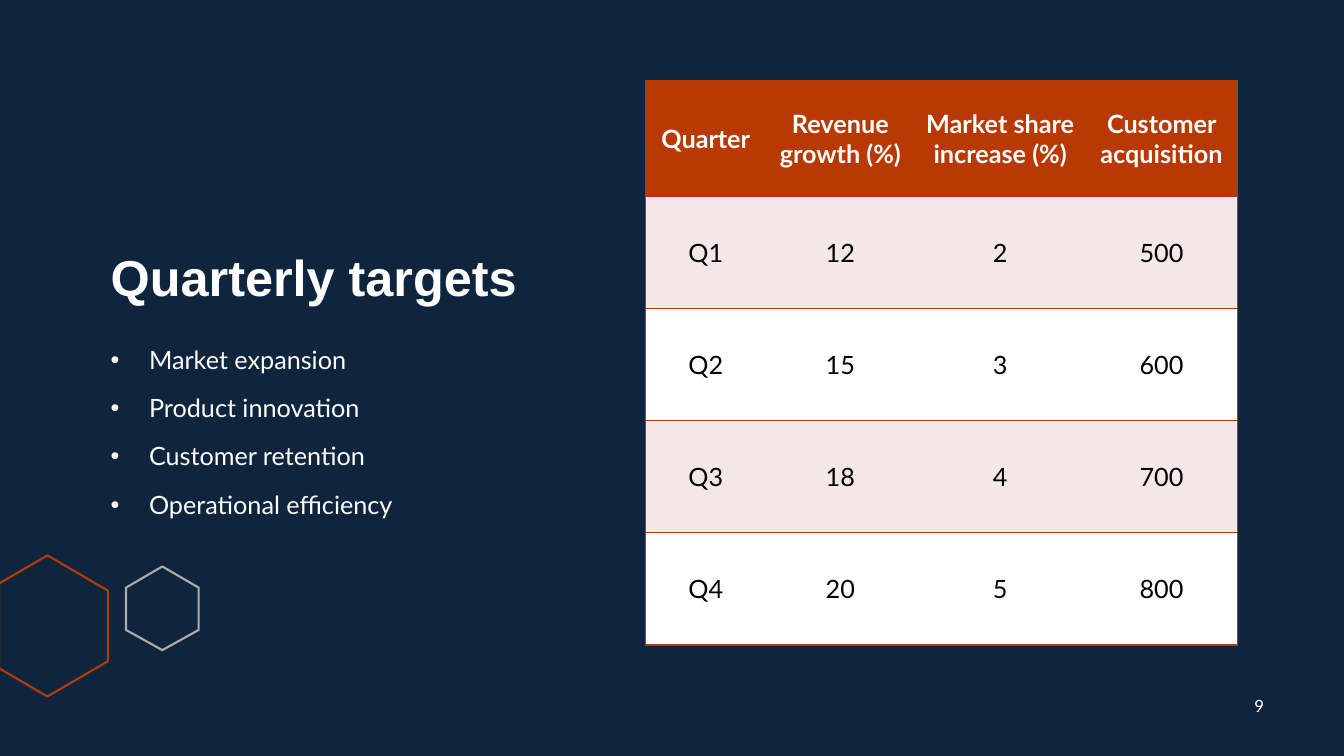
from lxml import etree
from pptx import Presentation
from pptx.dml.color import RGBColor
from pptx.enum import text as t
from pptx.oxml import ns
from pptx.util import Inches, Pt

# Content
TITLE = "Quarterly targets"
GOALS = ["Market expansion", "Product innovation", "Customer retention",
         "Operational efficiency"]
TARGETS = [
    ("Quarter", "Revenue growth (%)", "Market share increase (%)", "Customer acquisition"),
    ("Q1", "12", "2", "500"),
    ("Q2", "15", "3", "600"),
    ("Q3", "18", "4", "700"),
    ("Q4", "20", "5", "800"),
]
PAGE = "9"

# Style
NAVY = RGBColor(0x0F, 0x25, 0x3E)
RUST = RGBColor(0xB8, 0x39, 0x03)
GRAY = RGBColor(0xAF, 0xAB, 0xAB)
BLUSH = RGBColor(0xF3, 0xE8, 0xE7)
WHITE = RGBColor(0xFF, 0xFF, 0xFF)
BLACK = RGBColor(0, 0, 0)
PLAIN_TABLE = "{2D5ABB26-0587-4C30-8999-92F81FD0307C}"

# Layout, in inches
COLUMNS = [1.2, 1.47, 1.7, 1.5]
TABLE_HEIGHT, HEADER_HEIGHT = 5.6, 1.15
ROW_HEIGHT = (TABLE_HEIGHT - HEADER_HEIGHT) / (len(TARGETS) - 1)
HEXAGONS = [
    (RUST, [(0.47, 5.51), (1.07, 5.86), (1.07, 6.56), (0.47, 6.91),
            (-0.01, 6.63), (-0.01, 5.79)]),
    (GRAY, [(1.61, 5.62), (1.97, 5.83), (1.97, 6.25), (1.61, 6.45),
            (1.25, 6.25), (1.25, 5.83)]),
]


def add_run(paragraph, words, size, color=WHITE, bold=False, font="Lato"):
    run = paragraph.add_run()
    run.text = words
    run.font.size, run.font.name, run.font.bold = Pt(size), font, bold
    run.font.color.rgb = color


def add_frame(slide, left, top, width, height, anchor):
    box = slide.shapes.add_textbox(*map(Inches, (left, top, width, height)))
    frame = box.text_frame
    frame.word_wrap = True
    frame.vertical_anchor = anchor
    return frame


def add_bullet(paragraph):
    props = paragraph._p.get_or_add_pPr()
    props.set("marL", str(Inches(0.38)))
    props.set("indent", str(-Inches(0.38)))
    etree.SubElement(props, ns.qn("a:buFont")).set("typeface", "Arial")
    etree.SubElement(props, ns.qn("a:buChar")).set("char", "•")


def add_border(cell, side, visible):
    line = etree.SubElement(cell._tc.get_or_add_tcPr(), ns.qn("a:ln" + side))
    line.set("w", str(Pt(1)))
    if visible:
        fill = etree.SubElement(line, ns.qn("a:solidFill"))
        etree.SubElement(fill, ns.qn("a:srgbClr")).set("val", str(RUST))
    else:
        etree.SubElement(line, ns.qn("a:noFill"))


def add_hexagon(slide, color, points):
    corners = [(Inches(x), Inches(y)) for x, y in points]
    builder = slide.shapes.build_freeform(*corners[0])
    builder.add_line_segments(corners[1:], close=True)
    hexagon = builder.convert_to_shape()
    hexagon.shadow.inherit = False
    hexagon.fill.background()
    hexagon.line.color.rgb = color
    hexagon.line.width = Pt(1.5)


def add_targets(slide):
    table = slide.shapes.add_table(
        len(TARGETS), len(COLUMNS), Inches(6.4), Inches(0.8),
        Inches(sum(COLUMNS)), Inches(TABLE_HEIGHT)).table
    table._tbl.tblPr.find(ns.qn("a:tableStyleId")).text = PLAIN_TABLE
    for column, width in zip(table.columns, COLUMNS):
        column.width = Inches(width)
    for r, values in enumerate(TARGETS):
        header = r == 0
        table.rows[r].height = Inches(HEADER_HEIGHT if header else ROW_HEIGHT)
        for c, value in enumerate(values):
            cell = table.cell(r, c)
            # Outer frame plus a rule between rows
            add_border(cell, "L", c == 0)
            add_border(cell, "R", c == len(COLUMNS) - 1)
            add_border(cell, "T", True)
            add_border(cell, "B", True)
            cell.fill.solid()
            cell.fill.fore_color.rgb = RUST if header else BLUSH if r % 2 else WHITE
            cell.vertical_anchor = t.MSO_ANCHOR.MIDDLE
            paragraph = cell.text_frame.paragraphs[0]
            paragraph.alignment = t.PP_ALIGN.CENTER
            add_run(paragraph, value, 18, WHITE if header else BLACK, header)


def main():
    deck = Presentation()
    deck.slide_width, deck.slide_height = Inches(13.33), Inches(7.5)
    slide = deck.slides.add_slide(deck.slide_layouts[6])
    slide.background.fill.solid()
    slide.background.fill.fore_color.rgb = NAVY

    # Corner decoration
    for color, points in HEXAGONS:
        add_hexagon(slide, color, points)

    # Title
    heading = add_frame(slide, 1, 0.8, 4.8, 2.3, t.MSO_ANCHOR.BOTTOM).paragraphs[0]
    heading.line_spacing = 0.9
    add_run(heading, TITLE, 36, bold=True, font="Arial")

    # Goals
    goals = add_frame(slide, 1, 3.4, 4.8, 2.1, t.MSO_ANCHOR.TOP)
    for i, goal in enumerate(GOALS):
        paragraph = goals.add_paragraph() if i else goals.paragraphs[0]
        add_bullet(paragraph)
        paragraph.line_spacing = 0.9
        paragraph.space_before = Pt(15 if i else 0)
        add_run(paragraph, goal, 18)

    # Targets table
    add_targets(slide)

    # Page number
    number = add_frame(slide, 12.24, 6.8, 0.5, 0.4, t.MSO_ANCHOR.MIDDLE).paragraphs[0]
    number.alignment = t.PP_ALIGN.CENTER
    add_run(number, PAGE, 12)

    deck.save("out.pptx")


if __name__ == "__main__":
    main()
